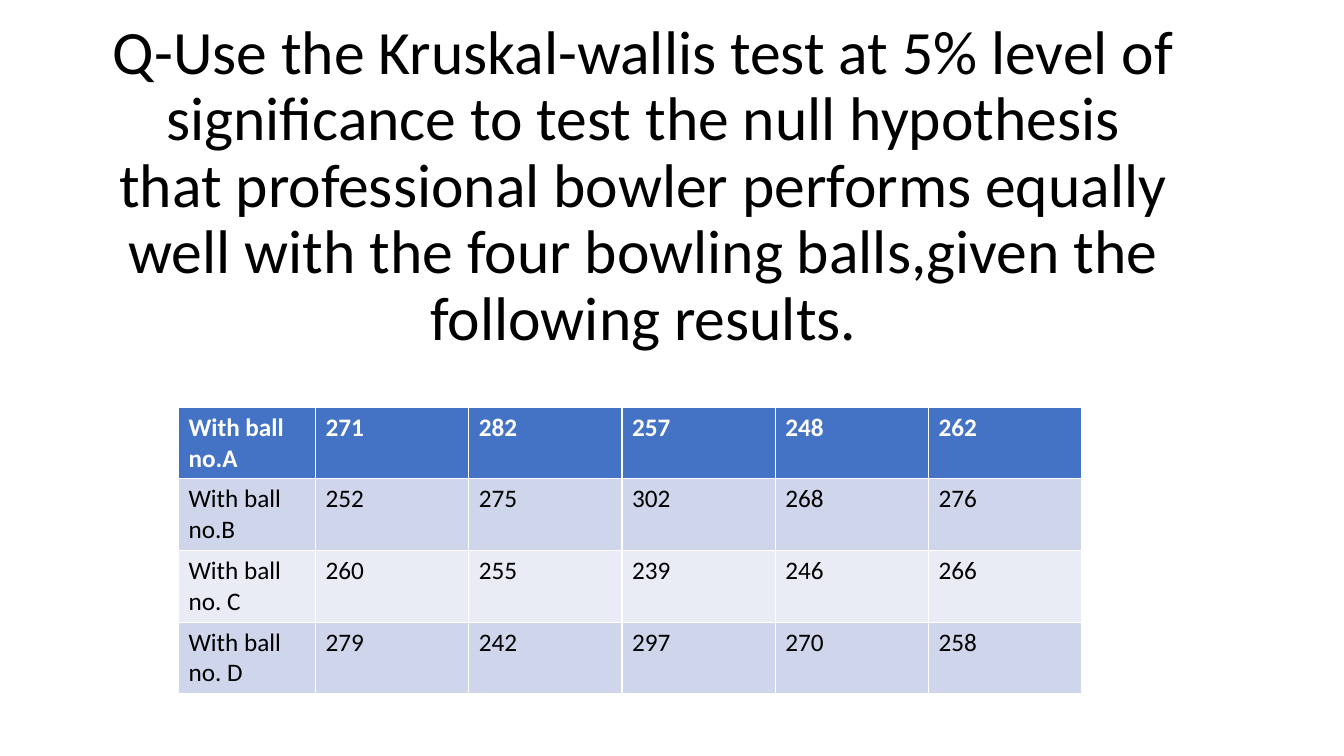
from pptx import Presentation
from pptx.dml.color import RGBColor
from pptx.enum.text import MSO_ANCHOR, MSO_AUTO_SIZE, PP_ALIGN
from pptx.util import Inches, Pt

BLACK = RGBColor(0x00, 0x00, 0x00)
WHITE = RGBColor(0xFF, 0xFF, 0xFF)
BLUE = RGBColor(0x44, 0x72, 0xC4)
BAND = RGBColor(0xCF, 0xD5, 0xEA)
PALE = RGBColor(0xE9, 0xEB, 0xF5)


def write(frame, text, size=18, color=BLACK, bold=False, align=PP_ALIGN.LEFT, spacing=1.0):
    para = frame.paragraphs[0]
    para.alignment = align
    para.line_spacing = spacing
    run = para.add_run()
    run.text = text
    run.font.name = "Calibri"
    run.font.size = Pt(size)
    run.font.bold = bold
    run.font.color.rgb = color


deck = Presentation()
deck.slide_width = Inches(13.33)
deck.slide_height = Inches(7.5)
slide = deck.slides.add_slide(deck.slide_layouts[5])

# Question: anchored to the bottom of its box
title = slide.shapes.title
title.left, title.top = Inches(0.99), Inches(-1.56)
title.width, title.height = Inches(10.79), Inches(5.12)
frame = title.text_frame
frame.word_wrap = True
frame.auto_size = MSO_AUTO_SIZE.NONE
frame.vertical_anchor = MSO_ANCHOR.BOTTOM
write(
    frame,
    "Q-Use the Kruskal-wallis test at 5% level of significance to test the null "
    "hypothesis that professional bowler performs equally well with the four "
    "bowling balls,given the following results.",
    size=44, align=PP_ALIGN.CENTER, spacing=0.9,
)

# Scores: one row for each ball
scores = [
    ("With ball no.A", 271, 282, 257, 248, 262),
    ("With ball no.B", 252, 275, 302, 268, 276),
    ("With ball no. C", 260, 255, 239, 246, 266),
    ("With ball no. D", 279, 242, 297, 270, 258),
]
fills = [BLUE, BAND, PALE, BAND]
table = slide.shapes.add_table(
    len(scores), len(scores[0]), Inches(1.77), Inches(4.04), Inches(8.96), Inches(2.84)
).table
for c, column in enumerate(table.columns):
    column.width = Inches(1.52 if c else 1.36)

for r, (row, fill) in enumerate(zip(scores, fills)):
    table.rows[r].height = Inches(0.71)
    head = r == 0
    for c, value in enumerate(row):
        cell = table.cell(r, c)
        cell.fill.solid()
        cell.fill.fore_color.rgb = fill
        write(cell.text_frame, str(value), color=WHITE if head else BLACK, bold=head)

deck.save("out.pptx")
